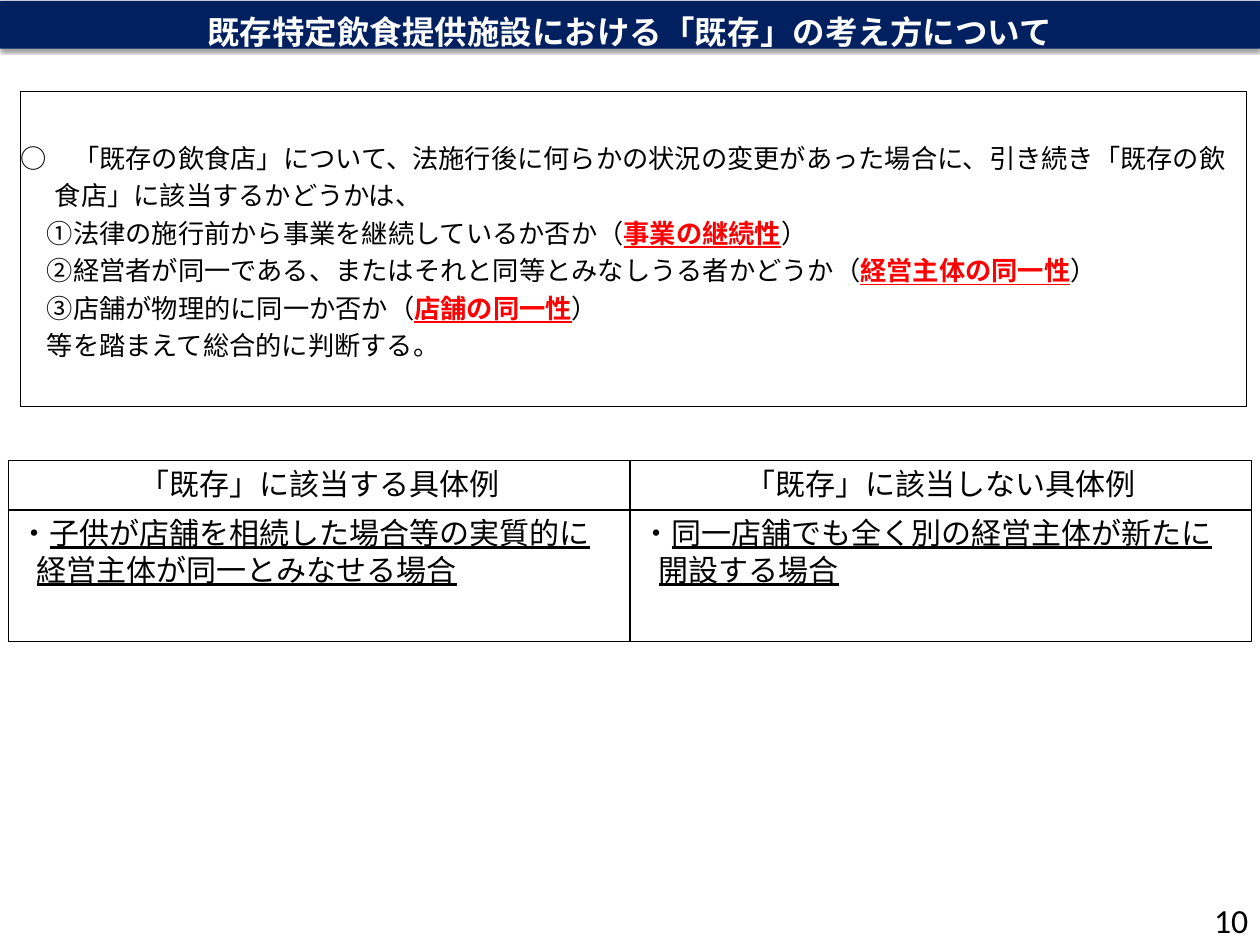
from lxml.etree import SubElement
from pptx import Presentation
from pptx.dml.color import RGBColor
from pptx.enum.shapes import MSO_SHAPE as Shape
from pptx.enum.text import MSO_ANCHOR as Anchor, MSO_AUTO_SIZE as AutoSize, PP_ALIGN as Align
from pptx.oxml.ns import qn
from pptx.util import Inches, Pt

WIDTH, HEIGHT = 14, 10.5
GOTHIC, LATIN = "Noto Sans CJK JP", "Calibri"
BLACK, RED, NAVY, WHITE = "000000", "FF0000", "002060", "FFFFFF"
PLAIN = {"bold": False, "underline": False}
KEYWORD = {"bold": True, "underline": True}
UNDERLINED = {"underline": True}

TITLE = "既存特定飲食提供施設における「既存」の考え方について"
INTRO = ("○　「既存の飲食店」について、法施行後に何らかの状況の変更があった場合に、"
         "引き続き「既存の飲食店」に該当するかどうかは、")
CRITERIA = [
    ("　①法律の施行前から事業を継続しているか否か（", "事業の継続性"),
    ("　②経営者が同一である、またはそれと同等とみなしうる者かどうか（", "経営主体の同一性"),
    ("　③店舗が物理的に同一か否か（", "店舗の同一性"),
]
CONCLUSION = "　等を踏まえて総合的に判断する。"
EXAMPLES = [
    ("「既存」に該当する具体例", "子供が店舗を相続した場合等の実質的に経営主体が同一とみなせる場合"),
    ("「既存」に該当しない具体例", "同一店舗でも全く別の経営主体が新たに開設する場合"),
]


def color(value):
    return RGBColor.from_string(value)


def apply(target, values):
    for name, value in values.items():
        setattr(target, name, value)


def place(left, top, width, height):
    return [Inches(value) for value in (left, top, width, height)]


def set_margins(target, left, top, right, bottom):
    sides = ("margin_left", "margin_top", "margin_right", "margin_bottom")
    apply(target, dict(zip(sides, place(left, top, right, bottom))))


def add_span(para, text, size, face, ink=BLACK, style=PLAIN):
    span = para.add_run()
    span.text = text
    apply(span.font, {"size": Pt(size), "name": face, **style})
    span.font.color.rgb = color(ink)
    SubElement(span.font._element, qn("a:ea"), typeface=face)


def hang(para, indent):
    properties = para._p.get_or_add_pPr()
    properties.set("marL", str(Inches(indent)))
    properties.set("indent", str(-Inches(indent)))


def add_shadow(shape):
    effects = SubElement(shape._element.spPr, qn("a:effectLst"))
    shadow = SubElement(effects, qn("a:outerShdw"), blurRad=str(Pt(3.1)), dist=str(Pt(1.6)),
                        dir="5400000", rotWithShape="0")
    tint = SubElement(shadow, qn("a:srgbClr"), val=BLACK)
    SubElement(tint, qn("a:alpha"), val="38000")


def add_borders(cell):
    properties = cell._tc.get_or_add_tcPr()
    for position, side in enumerate(("a:lnL", "a:lnR", "a:lnT", "a:lnB")):
        line = properties.makeelement(qn(side), {"w": str(Pt(1))})
        fill = SubElement(line, qn("a:solidFill"))
        SubElement(fill, qn("a:srgbClr"), val=BLACK)
        properties.insert(position, line)


def add_title(page):
    title = page.shapes.title
    apply(title, dict(zip(("left", "top", "width", "height"), place(0, 0.01, WIDTH, 0.53))))
    title.fill.solid()
    title.fill.fore_color.rgb = color(NAVY)
    add_shadow(title)
    frame = title.text_frame
    apply(frame, {"word_wrap": True, "auto_size": AutoSize.NONE, "vertical_anchor": Anchor.MIDDLE})
    set_margins(frame, 0.1, 0.14, 0.1, 0)
    para = frame.paragraphs[0]
    para.alignment = Align.CENTER
    add_span(para, TITLE, 26, GOTHIC, WHITE, {"bold": True})


def add_criteria(page):
    box = page.shapes.add_shape(Shape.RECTANGLE, *place(0.23, 1.02, 13.62, 3.5))
    box.shadow.inherit = False
    box.fill.background()
    box.line.color.rgb = color(BLACK)
    box.line.width = Pt(1)
    frame = box.text_frame
    apply(frame, {"word_wrap": True, "vertical_anchor": Anchor.TOP})
    set_margins(frame, 0, 0.49, 0, 0.07)
    lines = [[(INTRO,)]]
    lines += [[(lead,), (keyword, RED, KEYWORD), ("）",)] for lead, keyword in CRITERIA]
    lines.append([(CONCLUSION,)])
    for index, spans in enumerate(lines):
        para = frame.add_paragraph() if index else frame.paragraphs[0]
        apply(para, {"alignment": Align.LEFT, "line_spacing": Pt(30)})
        if index < 2:
            hang(para, 0.38)
        for text, *look in spans:
            add_span(para, text, 21, GOTHIC, *look)


def add_examples(page):
    frame = page.shapes.add_table(2, len(EXAMPLES), *place(0.09, 5.12, 13.82, 1.99))
    table = frame.table
    apply(table, {"first_row": False, "horz_banding": False})
    for row, height in zip(table.rows, (0.53, 1.46)):
        row.height = Inches(height)
    for column, (heading, example) in enumerate(EXAMPLES):
        head, body = (table.cell(row, column) for row in range(2))
        for cell in (head, body):
            cell.fill.background()
            set_margins(cell, 0.13, 0.07, 0.13, 0.07)
            add_borders(cell)
        para = head.text_frame.paragraphs[0]
        para.alignment = Align.CENTER
        add_span(para, heading, 24, LATIN)
        para = body.text_frame.paragraphs[0]
        hang(para, 0.19)
        add_span(para, "・", 24, LATIN)
        add_span(para, example, 24, LATIN, style=UNDERLINED)


def add_page_number(page, number):
    width, height = 3.27, 0.56
    box = page.shapes.add_textbox(*place(WIDTH - width, HEIGHT - height, width, height))
    frame = box.text_frame
    apply(frame, {"word_wrap": True, "vertical_anchor": Anchor.MIDDLE})
    set_margins(frame, 0.13, 0.07, 0.13, 0.07)
    para = frame.paragraphs[0]
    para.alignment = Align.RIGHT
    add_span(para, number, 27, LATIN)


def main():
    deck = Presentation()
    apply(deck, {"slide_width": Inches(WIDTH), "slide_height": Inches(HEIGHT)})
    page = deck.slides.add_slide(deck.slide_layouts[5])
    add_criteria(page)
    add_examples(page)
    add_page_number(page, "10")
    add_title(page)
    deck.save("out.pptx")


if __name__ == "__main__":
    main()
